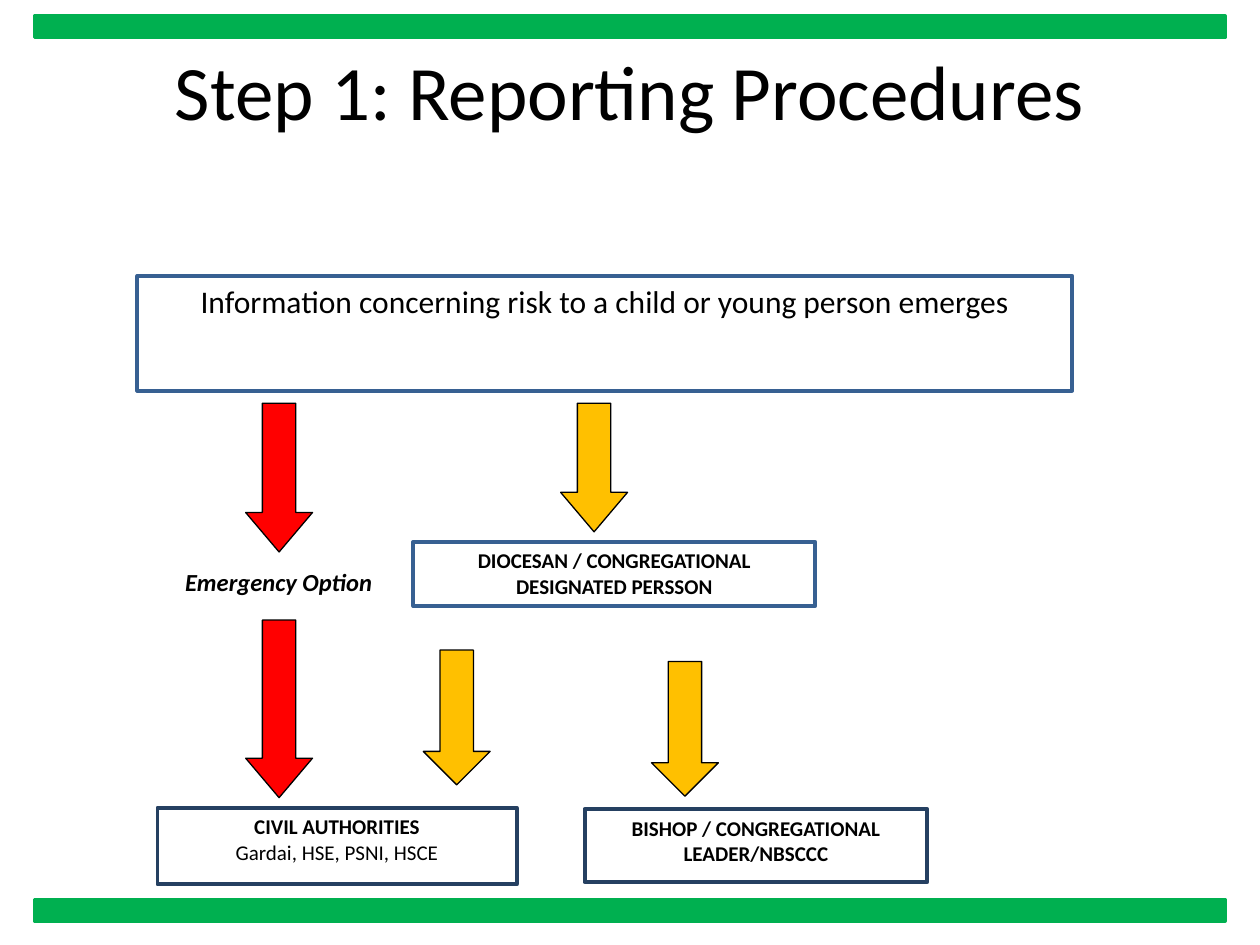
import pptx
import pptx.util
import pptx.dml.color
import pptx.enum.shapes
import pptx.enum.text

Pt = pptx.util.Pt
SHAPE = pptx.enum.shapes.MSO_SHAPE
ALIGN = pptx.enum.text.PP_ALIGN
ANCHOR = pptx.enum.text.MSO_ANCHOR

BLUE, NAVY = "376092", "254061"
AMBER, RED, GREEN = "FFC000", "FF0000", "00B050"
BLACK, WHITE = "000000", "FFFFFF"


def color(value):
    return pptx.dml.color.RGBColor.from_string(value)


def add_shape(s, kind, box, fill, line, weight):
    sp = s.shapes.add_shape(kind, *map(Pt, box))
    sp.shadow.inherit = False
    sp.fill.solid()
    sp.fill.fore_color.rgb = color(fill)
    sp.line.color.rgb = color(line)
    sp.line.width = Pt(weight)
    return sp


def write(sp, lines, size, align=ALIGN.CENTER, italic=False):
    tf = sp.text_frame
    tf.word_wrap = True
    tf.vertical_anchor = ANCHOR.TOP
    tf.text = "\n".join(text for text, bold in lines)
    for p, (text, bold) in zip(tf.paragraphs, lines):
        p.alignment = align
        for r in p.runs:
            r.font.name = "Calibri"
            r.font.size = Pt(size)
            r.font.bold = bold
            r.font.italic = italic
            r.font.color.rgb = color(BLACK)


def add_title(s, box):
    sp = s.shapes.add_textbox(*map(Pt, box))
    write(sp, [("Step 1: Reporting Procedures", False)], 44)


def add_step(s, box, line, lines, size=12):
    write(add_shape(s, SHAPE.RECTANGLE, box, WHITE, line, 2.25), lines, size)


def add_emergency_label(s, box):
    sp = add_shape(s, SHAPE.RECTANGLE, box, WHITE, WHITE, 0.75)
    write(sp, [("Emergency Option", True)], 14, ALIGN.LEFT, True)
    sp.text_frame.margin_left = Pt(10)


def add_arrow(s, left, top, height, fill, head):
    sp = add_shape(s, SHAPE.DOWN_ARROW, (left, top, 38.2, height), fill, BLACK, 0.75)
    sp.adjustments[0] = 0.5
    sp.adjustments[1] = head


def add_flow(s, left, top):
    steps = [
        (0, 0, 534.2, 65.5, BLUE, 18,
         [("Information concerning risk to a child or young person emerges", False)]),
        (157.7, 151.9, 229.7, 36.7, BLUE, 12,
         [("DIOCESAN / CONGREGATIONAL DESIGNATED PERSSON", True)]),
        (255.6, 304.6, 195.8, 41.8, NAVY, 12,
         [("BISHOP / CONGREGATIONAL LEADER/NBSCCC", True)]),
        (11.5, 303.8, 205.2, 43.9, NAVY, 12,
         [("CIVIL AUTHORITIES", True), ("Gardai, HSE, PSNI, HSCE", False)]),
    ]
    for x, y, width, height, line, size, lines in steps:
        add_step(s, (left + x, top + y, width, height), line, lines, size)

    add_emergency_label(s, (left + 17.3, top + 162.7, 129.6, 33.8))

    arrows = [
        (241.9, 72.7, 73.5, AMBER, 0.59),
        (293.8, 220.3, 77, AMBER, 0.5),
        (163.4, 213.8, 77, AMBER, 0.5),
        (61.9, 72.7, 85, RED, 0.59),
        (61.9, 196.6, 101.5, RED, 0.59),
    ]
    for x, y, height, fill, head in arrows:
        add_arrow(s, left + x, top + y, height, fill, head)


def add_bars(s, left, width, tops):
    for top in tops:
        add_shape(s, SHAPE.RECTANGLE, (left, top, width, 12.3), GREEN, GREEN, 2)


def main():
    prs = pptx.Presentation()
    prs.slide_width, prs.slide_height = Pt(720), Pt(540)
    s = prs.slides.add_slide(prs.slide_layouts[6])
    add_flow(s, 78.5, 157.7)
    add_title(s, (36, 21.6, 648, 90))
    add_bars(s, 19.7, 680.4, (9.2, 514))
    prs.save("out.pptx")


if __name__ == "__main__":
    main()
